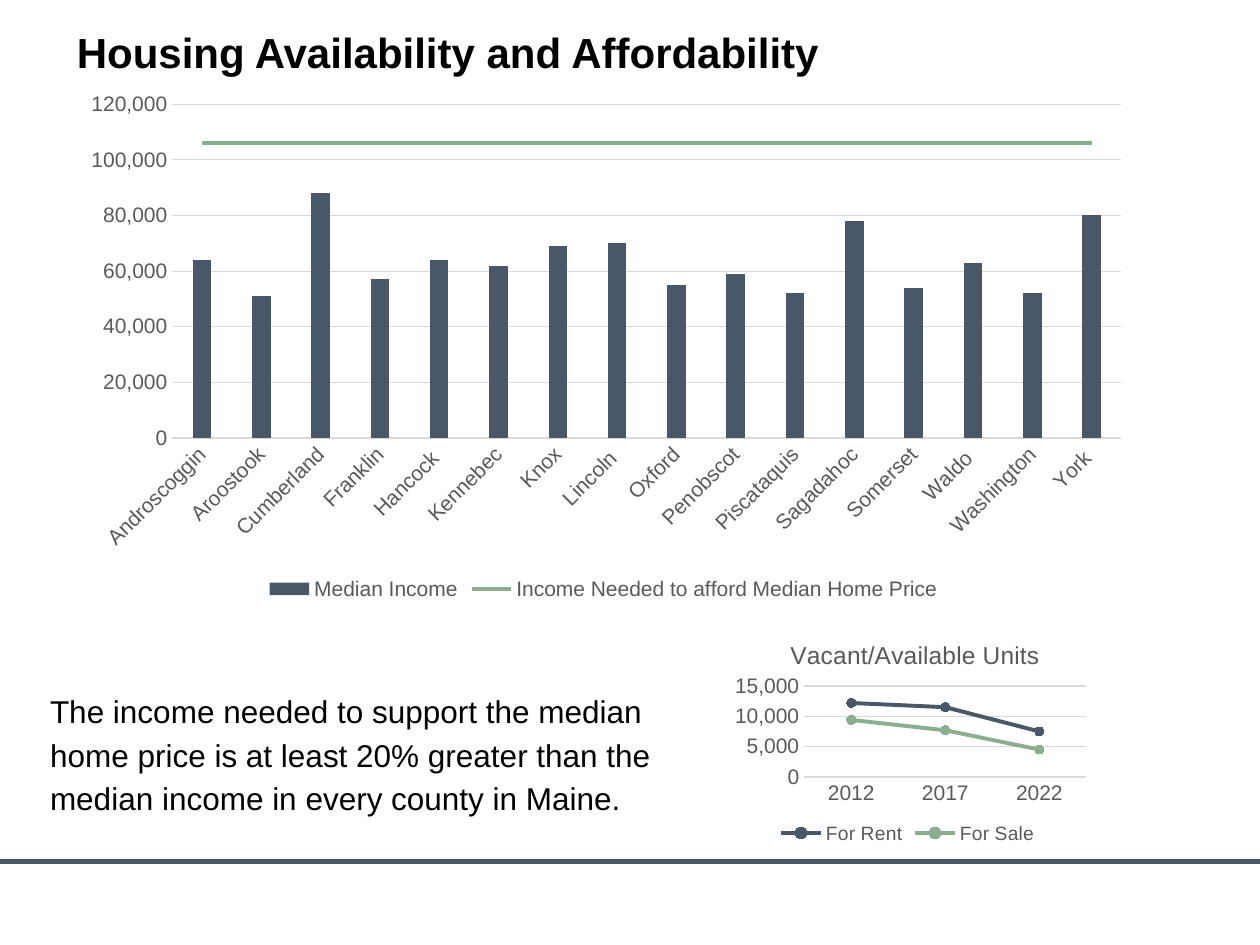
from lxml import etree
from pptx import Presentation
from pptx.chart.data import CategoryChartData
from pptx.dml.color import RGBColor
from pptx.enum.chart import XL_CHART_TYPE as CT, XL_LEGEND_POSITION as LP
from pptx.enum.chart import XL_MARKER_STYLE as MS, XL_TICK_MARK as TM
from pptx.enum.shapes import MSO_CONNECTOR as MC
from pptx.enum.text import MSO_AUTO_SIZE as AS
from pptx.oxml import parse_xml
from pptx.oxml.ns import nsdecls, qn
from pptx.util import Cm, Pt

NAVY, GREEN, GREY, GRID, BLACK = "495869", "8AAF8E", "595959", "D9D9D9", "000000"


def rgb(value):
    return RGBColor.from_string(value)


def layout_xml(inner=False, **fractions):
    """Manual layout with positions as fractions of the chart."""
    target = '<c:layoutTarget val="inner"/>' if inner else ""
    modes = '<c:xMode val="edge"/><c:yMode val="edge"/>'
    values = "".join(f'<c:{k} val="{v}"/>' for k, v in fractions.items())
    return parse_xml(f'<c:layout {nsdecls("c")}><c:manualLayout>'
                     f'{target}{modes}{values}</c:manualLayout></c:layout>')


class Deck:
    font = "Arial"

    def __init__(self, prs):
        self.s = prs.slides.add_slide(prs.slide_layouts[6])

    def style(self, font, size, color, bold=False):
        font.name, font.size, font.bold = self.font, Pt(size), bold
        font.color.rgb = rgb(color)

    def line(self, x1, y1, x2, y2, color, width):
        c = self.s.shapes.add_connector(MC.STRAIGHT, Cm(x1), Cm(y1), Cm(x2), Cm(y2))
        c.line.color.rgb, c.line.width = rgb(color), Pt(width)
        etree.SubElement(c._element.spPr, qn("a:effectLst"))

    def text(self, x, y, w, h, text, size, bold=False, wrap=True, spacing=None, after=None):
        tf = self.s.shapes.add_textbox(Cm(x), Cm(y), Cm(w), Cm(h)).text_frame
        tf.word_wrap, tf.auto_size = wrap, AS.SHAPE_TO_FIT_TEXT
        p = tf.paragraphs[0]
        p.line_spacing = spacing
        if after:
            p.space_after = Pt(after)
        r = p.add_run()
        r.text = text
        self.style(r.font, size, BLACK, bold)

    def chart(self, kind, x, y, w, h, cats, series, plot, legend_size, step):
        data = CategoryChartData(number_format="#,##0")
        data.categories = cats
        for name, values in series:
            data.add_series(name, values)
        ch = self.s.shapes.add_chart(kind, Cm(x), Cm(y), Cm(w), Cm(h), data).chart
        self.style(ch.font, 10, BLACK)
        ch.has_title = False
        ch.plots[0].vary_by_categories = False

        # Axes
        cat, val = ch.category_axis, ch.value_axis
        for axis in (cat, val):
            axis.major_tick_mark = axis.minor_tick_mark = TM.NONE
            self.style(axis.tick_labels.font, 12, GREY)
        val.has_major_gridlines = True
        for line in (cat.format.line, val.major_gridlines.format.line):
            line.color.rgb, line.width = rgb(GRID), Pt(0.75)
        val.format.line.fill.background()
        val.minimum_scale, val.major_unit = 0, step
        val.tick_labels.number_format = "#,##0"
        val.tick_labels.number_format_is_linked = False

        # Legend and plot area
        ch.has_legend = True
        ch.legend.position, ch.legend.include_in_layout = LP.BOTTOM, False
        self.style(ch.legend.font, legend_size, GREY)
        area = ch._chartSpace.chart.plotArea
        for old in area.findall(qn("c:layout")):
            area.remove(old)
        area.insert(0, layout_xml(inner=True, **plot))
        return ch

    def chart_title(self, ch, text, size, **place):
        tf = ch.chart_title.text_frame
        r = tf.paragraphs[0].add_run()
        r.text = text
        self.style(r.font, size, GREY)
        title = ch.chart_title._element
        for old in title.findall(qn("c:layout")):
            title.remove(old)
        title.find(qn("c:tx")).addnext(layout_xml(**place))
        ch.chart_title.include_in_layout = False

    def line_series(self, ser, color, marker):
        ser.smooth = False
        ser.format.line.color.rgb, ser.format.line.width = rgb(color), Pt(2.25)
        ser.marker.style = marker
        if marker != MS.NONE:
            ser.marker.size = 5
            ser.marker.format.fill.solid()
            ser.marker.format.fill.fore_color.rgb = rgb(color)
            ser.marker.format.line.color.rgb = rgb(color)

    def move_to_line(self, ch, index):
        """Turn one column series into a line on the same axes."""
        bars = ch.plots[0]._element
        ser = bars.findall(qn("c:ser"))[index]
        lines = parse_xml(f'<c:lineChart {nsdecls("c")}><c:grouping val="standard"/>'
                          '<c:varyColors val="0"/><c:marker val="1"/></c:lineChart>')
        for tag in ser.findall(qn("c:invertIfNegative")):
            ser.remove(tag)
        lines.insert(2, ser)
        for ax in bars.findall(qn("c:axId")):
            etree.SubElement(lines, qn("c:axId")).set("val", ax.get("val"))
        bars.addnext(lines)
        return ch.plots[1].series[0]


def main():
    prs = Presentation()
    prs.slide_width, prs.slide_height = Cm(25.4), Cm(19.05)
    d = Deck(prs)

    # Footer rule
    d.line(0, 17.37, 25.4, 17.37, NAVY, 3)

    # Vacant units
    units = d.chart(CT.LINE_MARKERS, 14.66, 12.42, 7.39, 4.7, ["2012", "2017", "2022"],
                    [("For Rent", (12200, 11500, 7500)), ("For Sale ", (9400, 7700, 4500))],
                    dict(x=0.21, y=0.3, w=0.77, h=0.39), 11, 5000)
    d.chart_title(units, "Vacant/Available Units", 14, x=0.16, y=0.08)
    for ser, color in zip(units.plots[0].series, (NAVY, GREEN)):
        d.line_series(ser, color, MS.CIRCLE)

    # Income by county
    income = {
        "Androscoggin": 64000, "Aroostook": 51000, "Cumberland": 88000, "Franklin": 57000,
        "Hancock ": 64000, "Kennebec": 62000, "Knox": 69000, "Lincoln ": 70000,
        "Oxford": 55000, "Penobscot": 59000, "Piscataquis": 52000, "Sagadahoc": 78000,
        "Somerset": 54000, "Waldo ": 63000, "Washington": 52000, "York ": 80000,
    }
    needed = [106000] * len(income)
    counties = d.chart(CT.COLUMN_CLUSTERED, 1.3, 1.68, 21.74, 10.52, list(income),
                       [("Median Income", list(income.values())),
                        ("Income Needed to afford Median Home Price", needed)],
                       dict(x=0.1, y=0.04, w=0.88, h=0.64), 12, 20000)
    bars = counties.plots[0]
    bars.gap_width, bars.overlap = 219, -27
    bars.series[0].format.fill.solid()
    bars.series[0].format.fill.fore_color.rgb = rgb(NAVY)
    d.line_series(d.move_to_line(counties, 1), GREEN, MS.NONE)
    labels = counties.category_axis._element.find(qn("c:txPr"))
    labels.find(qn("a:bodyPr")).set("rot", "-2700000")

    # Title and takeaway
    d.text(1.3, 0.41, 15.6, 1.27, "Housing Availability and Affordability", 24,
           bold=True, wrap=False)
    d.text(0.76, 13.72, 13.13, 2.84,
           "The income needed to support the median home price is at least 20% greater "
           "than the median income in every county in Maine.", 18, spacing=1.15, after=8)

    prs.save("out.pptx")


if __name__ == "__main__":
    main()
